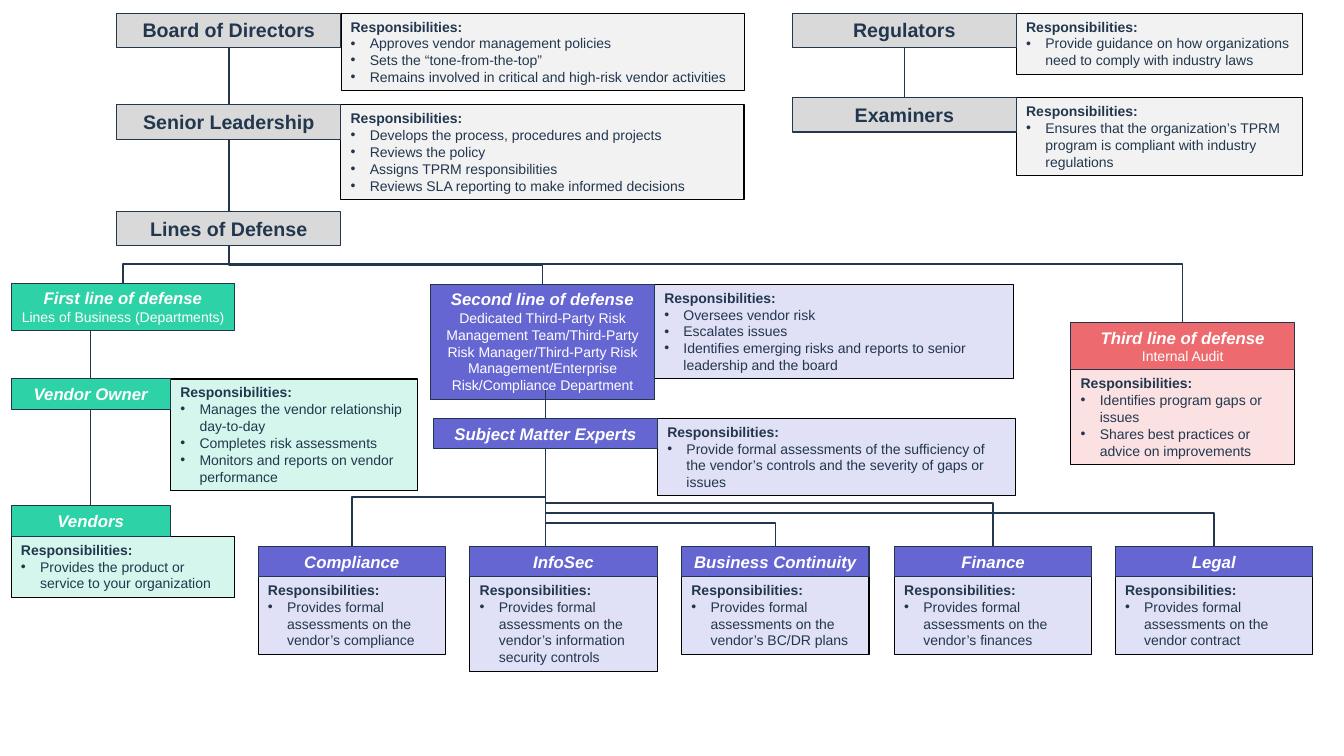
from dataclasses import dataclass

from lxml import etree
from pptx import Presentation, util as u
from pptx.dml.color import RGBColor
from pptx.enum import shapes, text
from pptx.oxml import ns

NAVY, WHITE, BLACK = "22374E", "FFFFFF", "000000"


@dataclass(frozen=True)
class Style:
    """Look of one group of roles."""
    head: str
    body: str
    alpha: int = 20
    font: str = WHITE
    size: int = 12
    italic: bool = True


@dataclass(frozen=True)
class Role:
    """Heading box with its responsibilities box beside or below it."""
    name: str
    style: Style
    left: float
    top: float
    width: float
    height: float
    subtitle: str = ""
    duties: tuple[str, ...] = ()
    body_width: float = 0
    body_height: float = 0
    below: bool = False
    body_line: float = 0.75

    @property
    def middle(self) -> float:
        """Horizontal centre of the heading box."""
        return self.left + self.width / 2


GOVERNANCE = Style("D9D9D9", "F2F2F2", 100, NAVY, 14, False)
FIRST = Style("2DD2A6", "2DD2A6")
SECOND = Style("6666D2", "6666D2")
THIRD = Style("ED6A6E", "ED6A6E")

ROLES = [
    Role("Board of Directors", GOVERNANCE, 1.16, 0.13, 2.22, 0.34, "",
         ("Approves vendor management policies", "Sets the “tone-from-the-top”",
          "Remains involved in critical and high-risk vendor activities"), 4, 0.77, body_line=0.25),
    Role("Senior Leadership", GOVERNANCE, 1.16, 1.04, 2.22, 0.34, "",
         ("Develops the process, procedures and projects", "Reviews the policy",
          "Assigns TPRM responsibilities", "Reviews SLA reporting to make informed decisions"), 4, 0.94),
    Role("Lines of Defense", GOVERNANCE, 1.16, 2.1, 2.22, 0.34),
    Role("Regulators", GOVERNANCE, 7.86, 0.13, 2.22, 0.34, "",
         ("Provide guidance on how organizations need to comply with industry laws",), 2.84, 0.61),
    Role("Examiners", GOVERNANCE, 7.86, 0.97, 2.22, 0.34, "",
         ("Ensures that the organization’s TPRM program is compliant with industry regulations",), 2.84, 0.77),
    Role("First line of defense", FIRST, 0.11, 2.81, 2.22, 0.47, "Lines of Business (Departments)"),
    Role("Vendor Owner", FIRST, 0.11, 3.76, 1.58, 0.3, "",
         ("Manages the vendor relationship day-to-day", "Completes risk assessments",
          "Monitors and reports on vendor performance"), 2.45, 1.11),
    Role("Vendors", FIRST, 0.11, 5.02, 1.58, 0.3, "",
         ("Provides the product or service to your organization",), 2.22, 0.61, True),
    Role("Second line of defense", SECOND, 4.27, 2.82, 2.22, 1.14,
         "Dedicated Third-Party Risk Management Team/Third-Party Risk Manager/Third-Party Risk "
         "Management/Enterprise Risk/Compliance Department",
         ("Oversees vendor risk", "Escalates issues",
          "Identifies emerging risks and reports to senior leadership and the board"), 3.56, 0.94),
    Role("Subject Matter Experts", SECOND, 4.3, 4.15, 2.22, 0.3, "",
         ("Provide formal assessments of the sufficiency of the vendor’s controls "
          "and the severity of gaps or issues",), 3.55, 0.77),
    Role("Third line of defense", THIRD, 10.62, 3.2, 2.22, 0.47, "Internal Audit",
         ("Identifies program gaps or issues", "Shares best practices or advice on improvements"),
         2.22, 0.94, True),
]
SPECIALISTS = [
    ("Compliance", 2.56, 1.86, "vendor’s compliance", 0.77),
    ("InfoSec", 4.66, 1.86, "vendor’s information security controls", 0.94),
    ("Business Continuity", 6.76, 1.86, "vendor’s BC/DR plans", 0.77),
    ("Finance", 8.87, 1.96, "vendor’s finances", 0.77),
    ("Legal", 11.06, 1.96, "vendor contract", 0.77),
]
ROLES += [Role(name, SECOND, left, 5.42, width, 0.3, "",
               (f"Provides formal assessments on the {subject}",), width, height, True)
          for name, left, width, subject, height in SPECIALISTS]


def colour(value: str) -> RGBColor:
    """Turn a hex string into a colour."""
    return RGBColor.from_string(value)


def add_box(slide, left: float, top: float, width: float, height: float,
            fill: str, line: str, line_width: float = 0.75, alpha: int = 100):
    """Draw a rectangle that holds wrapped text from its top edge."""
    shape = slide.shapes.add_shape(shapes.MSO_SHAPE.RECTANGLE, *map(u.Inches, (left, top, width, height)))
    shape.shadow.inherit = False
    shape.fill.solid()
    shape.fill.fore_color.rgb = colour(fill)
    if alpha < 100:
        tint = shape.fill._xPr.find(".//" + ns.qn("a:srgbClr"))
        etree.SubElement(tint, ns.qn("a:alpha"), val=str(alpha * 1000))
    shape.line.color.rgb = colour(line)
    shape.line.width = u.Pt(line_width)
    frame = shape.text_frame
    frame.word_wrap = True
    frame.auto_size = text.MSO_AUTO_SIZE.SHAPE_TO_FIT_TEXT
    frame.vertical_anchor = text.MSO_ANCHOR.TOP
    return shape


def write(shape, words: str, *, size: int = 10, font: str = NAVY, bold: bool = False,
          italic: bool = False, centred: bool = False, bullet: bool = False) -> None:
    """Add one formatted paragraph to a shape."""
    frame = shape.text_frame
    paragraph = frame.add_paragraph() if frame.text else frame.paragraphs[0]
    paragraph.alignment = text.PP_ALIGN.CENTER if centred else text.PP_ALIGN.LEFT
    if bullet:
        properties = paragraph._p.get_or_add_pPr()
        properties.set("marL", str(u.Inches(0.19)))
        properties.set("indent", str(u.Inches(-0.19)))
        etree.SubElement(properties, ns.qn("a:buFont"), typeface="Arial")
        etree.SubElement(properties, ns.qn("a:buChar"), char="•")
    run = paragraph.add_run()
    run.text = words
    run.font.name, run.font.size = "Arial", u.Pt(size)
    run.font.bold, run.font.italic = bold, italic
    run.font.color.rgb = colour(font)


def add_role(slide, role: Role):
    """Draw a role and return its heading box."""
    style = role.style
    if role.duties:
        left = role.left if role.below else role.left + role.width
        top = role.top + role.height if role.below else role.top
        body = add_box(slide, left, top, role.body_width, role.body_height,
                       style.body, BLACK, role.body_line, style.alpha)
        write(body, "Responsibilities:", bold=True)
        for duty in role.duties:
            write(body, duty, bullet=True)
    head = add_box(slide, role.left, role.top, role.width, role.height, style.head, NAVY)
    write(head, role.name, size=style.size, font=style.font, bold=True, italic=style.italic, centred=True)
    if role.subtitle:
        write(head, role.subtitle, font=style.font, centred=True)
    return head


def add_line(slide, kind, x1: float, y1: float, x2: float, y2: float):
    """Draw a navy connector without a shadow."""
    connector = slide.shapes.add_connector(kind, *map(u.Inches, (x1, y1, x2, y2)))
    connector.line.color.rgb = colour(NAVY)
    connector.line.width = u.Pt(1)
    etree.SubElement(connector._element.spPr, ns.qn("a:effectLst"))
    return connector


def add_elbow(slide, x1: float, y1: float, x2: float, y2: float, bend: float) -> None:
    """Draw a connector that goes down, across at height bend, and down."""
    drop, span = y2 - y1, abs(x2 - x1)
    left, top = (x1 + x2 - drop) / 2, (y1 + y2 - span) / 2
    connector = add_line(slide, shapes.MSO_CONNECTOR.ELBOW, left, top, left + drop, top + span)
    properties = connector._element.spPr
    frame = properties.find(ns.qn("a:xfrm"))
    frame.set("rot", str((270 if x2 > x1 else 90) * 60000))
    if x2 > x1:
        frame.set("flipH", "1")
    adjustments = properties.find(".//" + ns.qn("a:avLst"))
    etree.SubElement(adjustments, ns.qn("a:gd"), name="adj1",
                     fmla=f"val {round((bend - y1) / drop * 100000)}")


def main() -> None:
    """Build the slide and save it."""
    presentation = Presentation()
    presentation.slide_width, presentation.slide_height = u.Inches(13.33), u.Inches(7.5)
    slide = presentation.slides.add_slide(presentation.slide_layouts[6])
    heads = {role.name: add_role(slide, role) for role in ROLES}
    roles = {role.name: role for role in ROLES}
    straight = shapes.MSO_CONNECTOR.STRAIGHT
    for upper, lower in (("Board of Directors", "Senior Leadership"), ("Senior Leadership", "Lines of Defense"),
                         ("Regulators", "Examiners"), ("Vendor Owner", "Vendors")):
        connector = add_line(slide, straight, 0, 0, 1, 1)
        connector.begin_connect(heads[upper], 2)
        connector.end_connect(heads[lower], 0)
    for name, start in (("Vendor Owner", 3.28), ("Subject Matter Experts", 3.87)):
        role = roles[name]
        add_line(slide, straight, role.middle, start, role.middle, role.top).end_connect(heads[name], 0)
    experts, legal = roles["Subject Matter Experts"], roles["Legal"]
    trunk = add_line(slide, straight, experts.middle, 4.45, experts.middle, legal.top)
    trunk.begin_connect(heads[experts.name], 2)
    for upper, lower, bend in (("Lines of Defense", "First line of defense", 2.62),
                               ("Lines of Defense", "Second line of defense", 2.63),
                               ("Lines of Defense", "Third line of defense", 2.62),
                               (experts.name, "Compliance", 4.93),
                               (experts.name, "Business Continuity", 5.19),
                               (experts.name, "Finance", 4.99)):
        start, end = roles[upper], roles[lower]
        add_elbow(slide, start.middle, start.top + start.height, end.middle, end.top, bend)
    corner = add_line(slide, shapes.MSO_CONNECTOR.ELBOW, experts.middle, 5.09, legal.middle, legal.top)
    corner._element.spPr.find(ns.qn("a:prstGeom")).set("prst", "bentConnector2")
    presentation.save("out.pptx")


if __name__ == "__main__":
    main()
